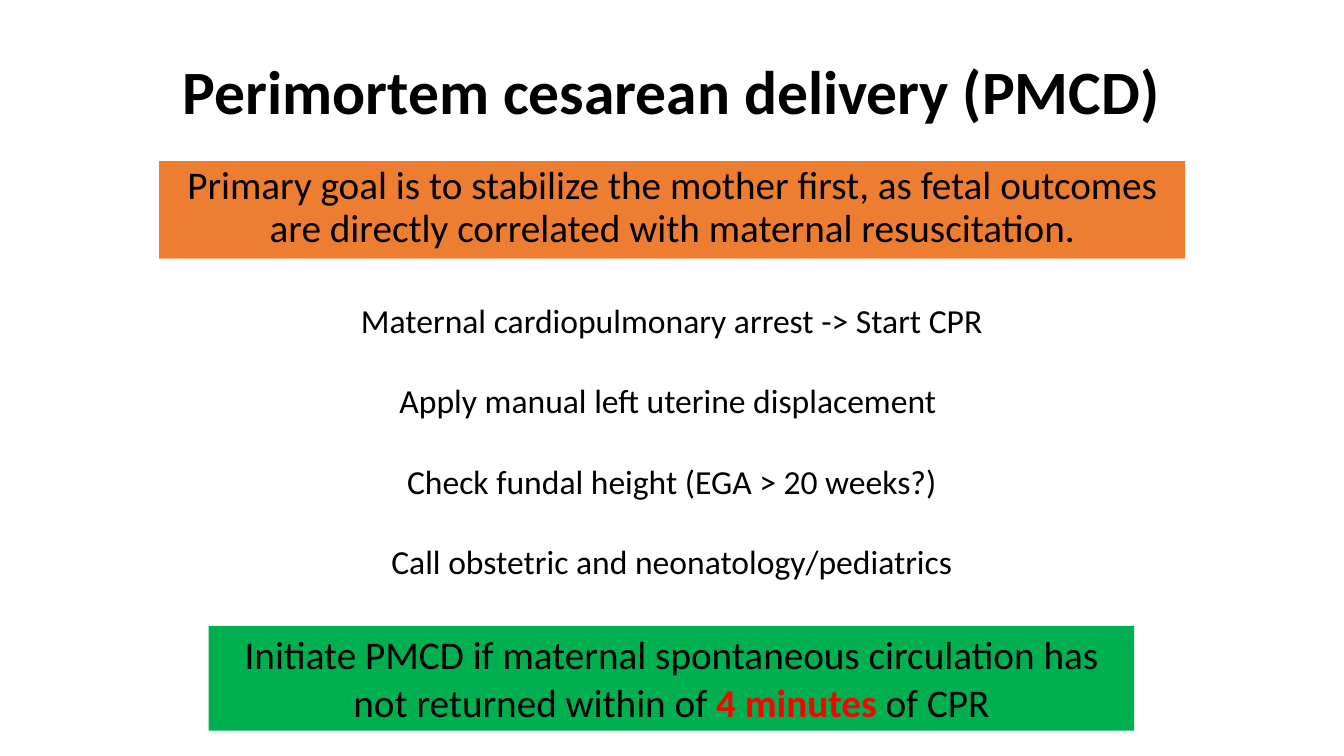
import pptx
import pptx.dml.color
import pptx.enum.shapes
import pptx.enum.text
import pptx.util
from pptx.util import Cm

BLACK = pptx.dml.color.RGBColor(0x00, 0x00, 0x00)
ORANGE = pptx.dml.color.RGBColor(0xED, 0x7D, 0x31)
GREEN = pptx.dml.color.RGBColor(0x00, 0xB0, 0x50)
RED = pptx.dml.color.RGBColor(0xFF, 0x00, 0x00)

RESPONSE_STEPS = [
    "Maternal cardiopulmonary arrest -> Start CPR",
    "Apply manual left uterine displacement ",
    "Check fundal height (EGA > 20 weeks?)",
    "Call obstetric and neonatology/pediatrics",
]


class SlideBuilder:
    """Holds the text style and the slide being filled."""

    font_name = "Calibri"

    def __init__(self, presentation):
        layout = presentation.slide_layouts.get_by_name("Title Only")
        self.slide = presentation.slides.add_slide(layout)

    def style_run(self, run, size, color=BLACK, bold=False):
        run.font.name = self.font_name
        run.font.size = pptx.util.Pt(size)
        run.font.color.rgb = color
        run.font.bold = bold

    def format_text(self, text_frame, size, anchor, bold=False):
        text_frame.word_wrap = True
        text_frame.auto_size = pptx.enum.text.MSO_AUTO_SIZE.NONE
        text_frame.vertical_anchor = anchor
        for paragraph in text_frame.paragraphs:
            paragraph.alignment = pptx.enum.text.PP_ALIGN.CENTER
            for run in paragraph.runs:
                self.style_run(run, size, bold=bold)

    def title(self, text, left, top, width, height):
        title = self.slide.shapes.title
        title.left, title.top, title.width, title.height = left, top, width, height
        title.text_frame.text = text
        title.text_frame.paragraphs[0].line_spacing = 0.9
        self.format_text(title.text_frame, 44, pptx.enum.text.MSO_ANCHOR.MIDDLE, bold=True)

    def banner(self, text, color, left, top, width, height, line_spacing=1.0):
        banner = self.slide.shapes.add_shape(
            pptx.enum.shapes.MSO_SHAPE.RECTANGLE, left, top, width, height)
        banner.shadow.inherit = False
        banner.fill.solid()
        banner.fill.fore_color.rgb = color
        banner.line.fill.background()
        banner.text_frame.text = text
        paragraph = banner.text_frame.paragraphs[0]
        paragraph.line_spacing = line_spacing
        self.format_text(banner.text_frame, 28, pptx.enum.text.MSO_ANCHOR.TOP)
        return paragraph

    def steps(self, lines, left, top, width, height, gap):
        text_frame = self.slide.shapes.add_textbox(left, top, width, height).text_frame
        text_frame.text = "\n".join(lines)
        for paragraph in text_frame.paragraphs[1:]:
            paragraph.space_before = pptx.util.Pt(gap)
        self.format_text(text_frame, 24, pptx.enum.text.MSO_ANCHOR.TOP)


def main():
    presentation = pptx.Presentation()
    presentation.slide_width = Cm(33.87)
    presentation.slide_height = Cm(19.05)
    builder = SlideBuilder(presentation)

    # Title
    builder.title("Perimortem cesarean delivery (PMCD)",
                  Cm(2.33), Cm(0.53), Cm(29.21), Cm(3.68))

    # Primary goal
    builder.banner("Primary goal is to stabilize the mother first, as fetal outcomes "
                   "are directly correlated with maternal resuscitation.",
                   ORANGE, Cm(4.01), Cm(4.06), Cm(25.86), Cm(2.46), line_spacing=0.9)

    # Response steps
    builder.steps(RESPONSE_STEPS, Cm(5.54), Cm(7.44), Cm(22.78), Cm(7.44), gap=28.5)

    # Decision point with the time limit emphasised
    decision = builder.banner("Initiate PMCD if maternal spontaneous circulation has "
                              "not returned within of ",
                              GREEN, Cm(5.26), Cm(15.77), Cm(23.32), Cm(2.64))
    for text, color, bold in [("4 minutes ", RED, True), ("of CPR", BLACK, False)]:
        run = decision.add_run()
        run.text = text
        builder.style_run(run, 28, color, bold)

    presentation.save("out.pptx")


if __name__ == "__main__":
    main()
